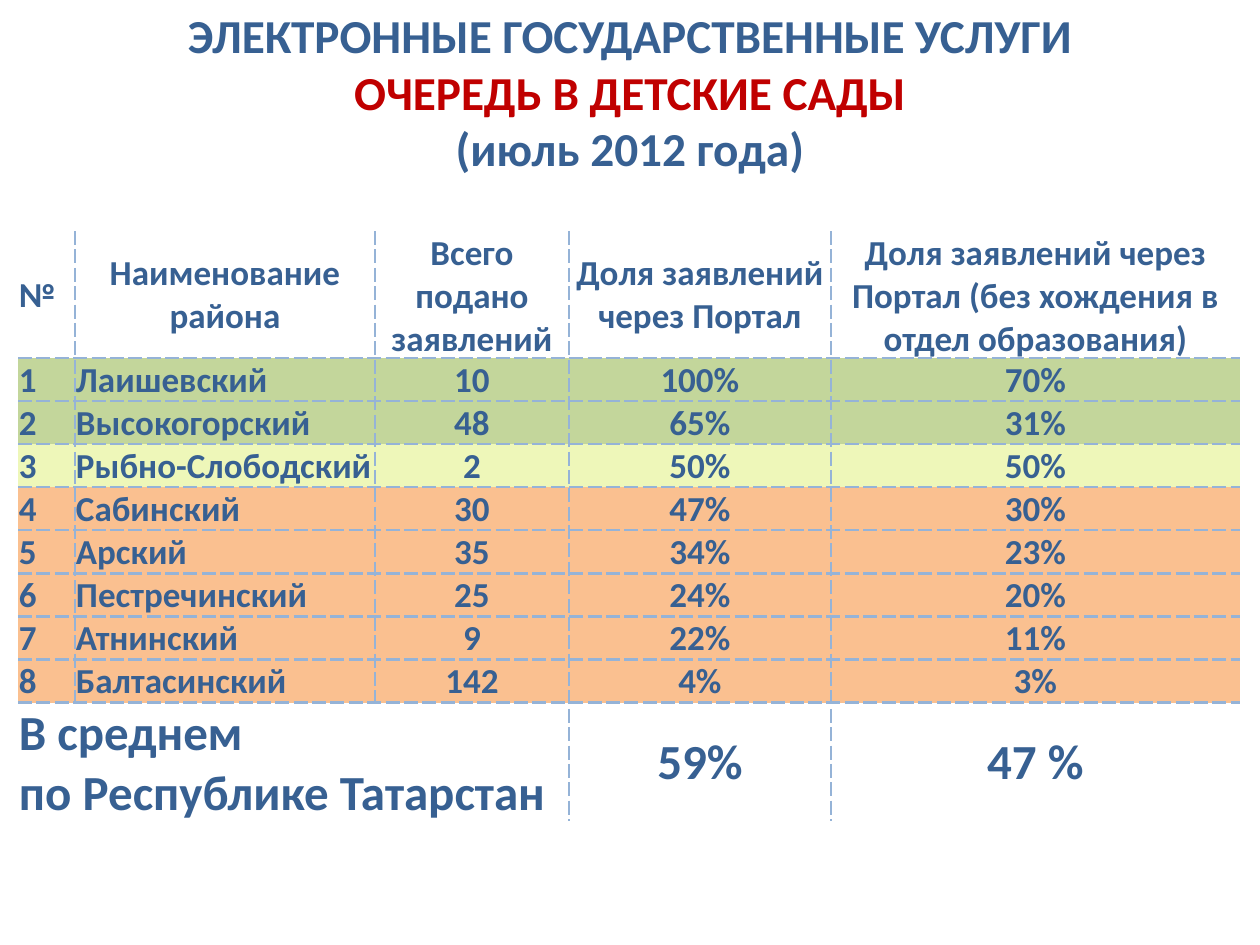
from lxml.etree import SubElement
from pptx import Presentation
from pptx.dml.color import RGBColor
from pptx.enum.text import MSO_ANCHOR as Anchor, PP_ALIGN as Align
from pptx.oxml.ns import qn
from pptx.util import Emu, Pt

PX_PER_INCH = 126
BLUE, RED, LINE = "376092", "C00000", "95B3D7"
GREEN, YELLOW, ORANGE = "C3D69B", "EEF7B9", "FAC090"


def px(length):
    return Emu(round(length * 914400 / PX_PER_INCH))


def color(value):
    return RGBColor.from_string(value)


class SlideBuilder:
    font_name = "Calibri"

    def __init__(self, slide):
        self.slide = slide

    def style(self, paragraph, size, fill, align):
        paragraph.alignment = align
        font = paragraph.font
        font.name, font.size, font.bold = self.font_name, Pt(size), True
        font.color.rgb = color(fill)

    def text(self, box, lines, size):
        shape = self.slide.shapes.add_textbox(*map(px, box))
        frame = shape.text_frame
        frame.word_wrap = True
        frame.text = "\n".join(line for line, _ in lines)
        for paragraph, (_, fill) in zip(frame.paragraphs, lines):
            self.style(paragraph, size, fill, Align.CENTER)

    def border(self, cell, side, visible):
        line = SubElement(cell._tc.get_or_add_tcPr(), qn(f"a:ln{side}"), w=str(Pt(1.5)))
        if not visible:
            SubElement(line, qn("a:noFill"))
            return
        SubElement(SubElement(line, qn("a:solidFill")), qn("a:srgbClr"), val=LINE)
        SubElement(line, qn("a:prstDash"), val="sysDash")

    def cell(self, cell, text, size, fill, align, anchor):
        cell.margin_left = cell.margin_top = cell.margin_right = px(1)
        cell.margin_bottom = 0
        cell.vertical_anchor = anchor
        if fill:
            cell.fill.solid()
            cell.fill.fore_color.rgb = color(fill)
        else:
            cell.fill.background()
        cell.text = text
        for paragraph in cell.text_frame.paragraphs:
            self.style(paragraph, size, BLUE, align)

    def table(self, left, top, widths, heights):
        frame = self.slide.shapes.add_table(
            len(heights), len(widths), px(left), px(top), px(sum(widths)), px(sum(heights)))
        table = frame.table
        table.first_row = table.horz_banding = False
        for column, width in zip(table.columns, widths):
            column.width = px(width)
        for row, height in zip(table.rows, heights):
            row.height = px(height)
        # Dashed lines run between cells only, not around the table
        for r in range(len(heights)):
            for c in range(len(widths)):
                inner = {"L": c > 0, "R": c < len(widths) - 1,
                         "T": r > 0, "B": r < len(heights) - 1}
                for side, visible in inner.items():
                    self.border(table.cell(r, c), side, visible)
        return table


HEADERS = ["№", "Наименование района", "Всего подано заявлений",
           "Доля заявлений через Портал",
           "Доля заявлений через Портал (без хождения в отдел образования)"]
DISTRICTS = [
    ("Лаишевский", "10", "100%", "70%", GREEN),
    ("Высокогорский", "48", "65%", "31%", GREEN),
    ("Рыбно-Слободский", "2", "50%", "50%", YELLOW),
    ("Сабинский", "30", "47%", "30%", ORANGE),
    ("Арский", "35", "34%", "23%", ORANGE),
    ("Пестречинский", "25", "24%", "20%", ORANGE),
    ("Атнинский", "9", "22%", "11%", ORANGE),
    ("Балтасинский", "142", "4%", "3%", ORANGE),
]
AVERAGES = ["В среднем\nпо Республике Татарстан", "", "", "59%", "47 %"]


def main():
    presentation = Presentation()
    presentation.slide_width, presentation.slide_height = px(1260), px(945)
    slide = presentation.slides.add_slide(presentation.slide_layouts[6])
    builder = SlideBuilder(slide)

    # Title
    builder.text((0, 0, 1260, 184), [
        ("ЭЛЕКТРОННЫЕ ГОСУДАРСТВЕННЫЕ УСЛУГИ", BLUE),
        ("ОЧЕРЕДЬ В ДЕТСКИЕ САДЫ", RED),
        ("(июль 2012 года)", BLUE)], 27)

    # Table grid
    table = builder.table(18, 231, [57, 300, 194, 262, 409],
                          [111] + [37] * (len(DISTRICTS) + 1))
    last = len(DISTRICTS) + 1
    table.cell(last, 0).merge(table.cell(last, 2))

    # Header row
    for c, header in enumerate(HEADERS):
        align = Align.CENTER if c else Align.LEFT
        builder.cell(table.cell(0, c), header, 20, None, align, Anchor.MIDDLE)

    # District rows
    for r, (*values, fill) in enumerate(DISTRICTS, 1):
        for c, value in enumerate([str(r), *values]):
            align = Align.CENTER if c > 1 else Align.LEFT
            anchor = Anchor.BOTTOM if c == 1 else Anchor.MIDDLE
            builder.cell(table.cell(r, c), value, 20, fill, align, anchor)

    # Average row
    for c, value in enumerate(AVERAGES):
        if value:
            align = Align.CENTER if c else Align.LEFT
            builder.cell(table.cell(last, c), value, 28, None, align, Anchor.MIDDLE)

    presentation.save("out.pptx")


if __name__ == "__main__":
    main()
